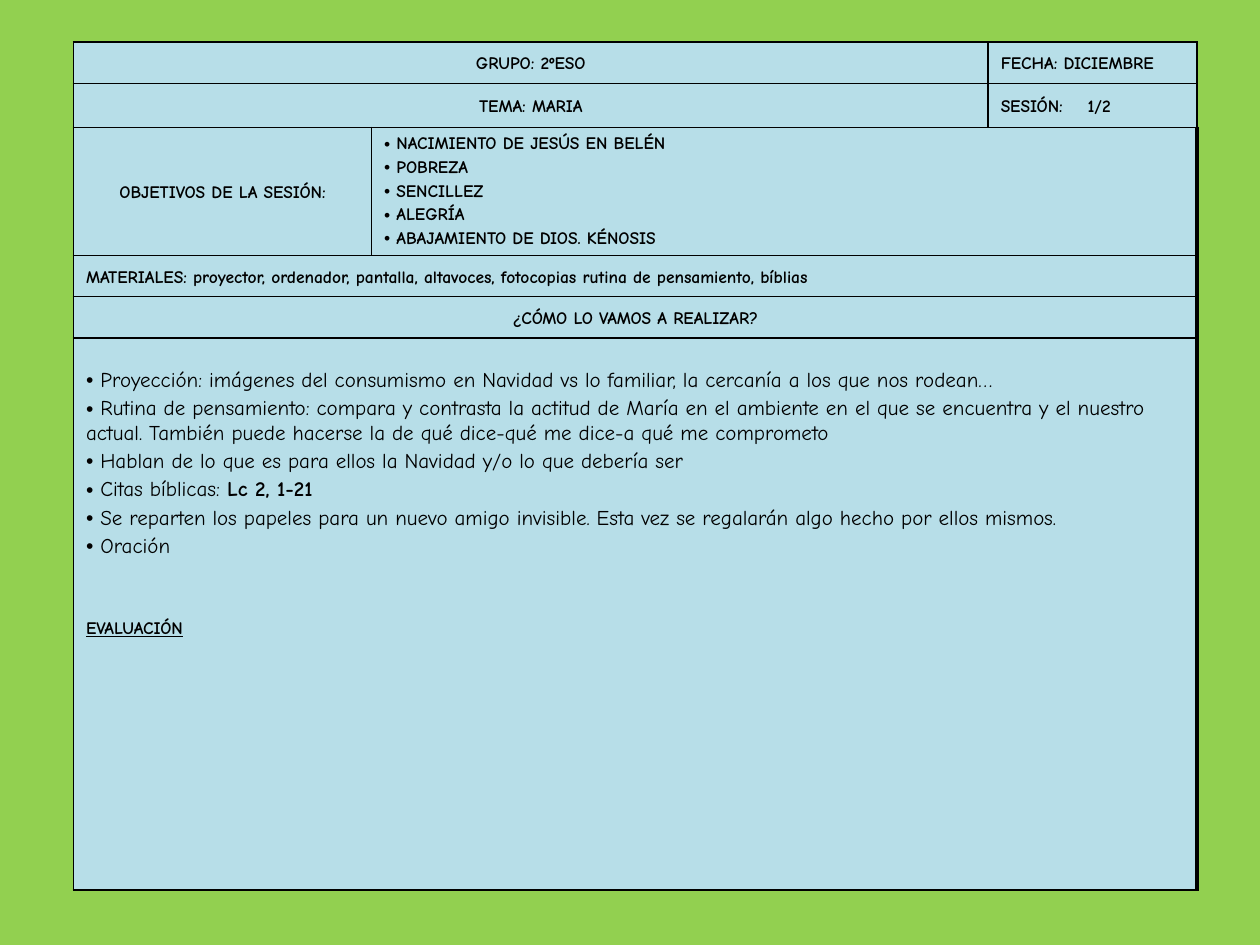
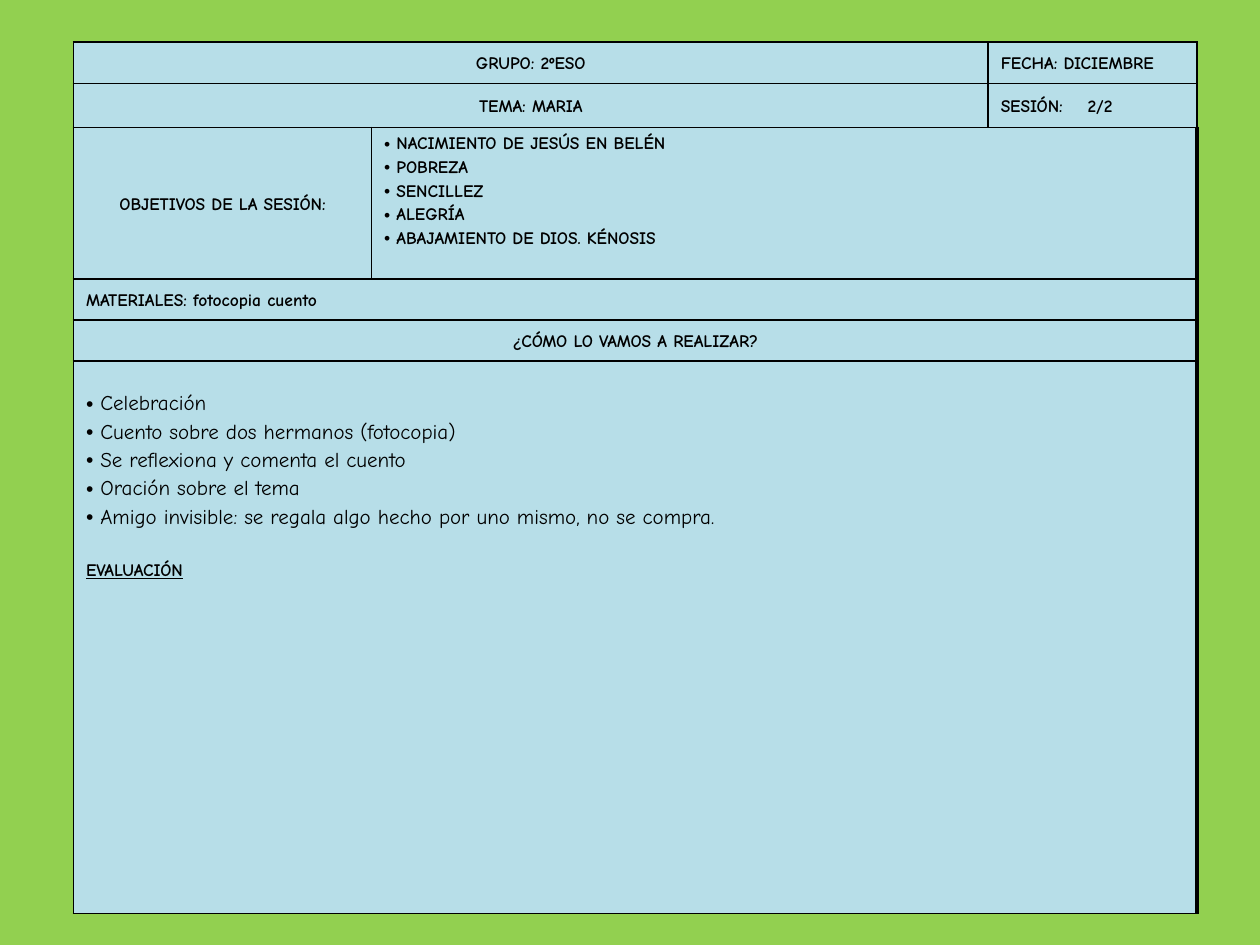
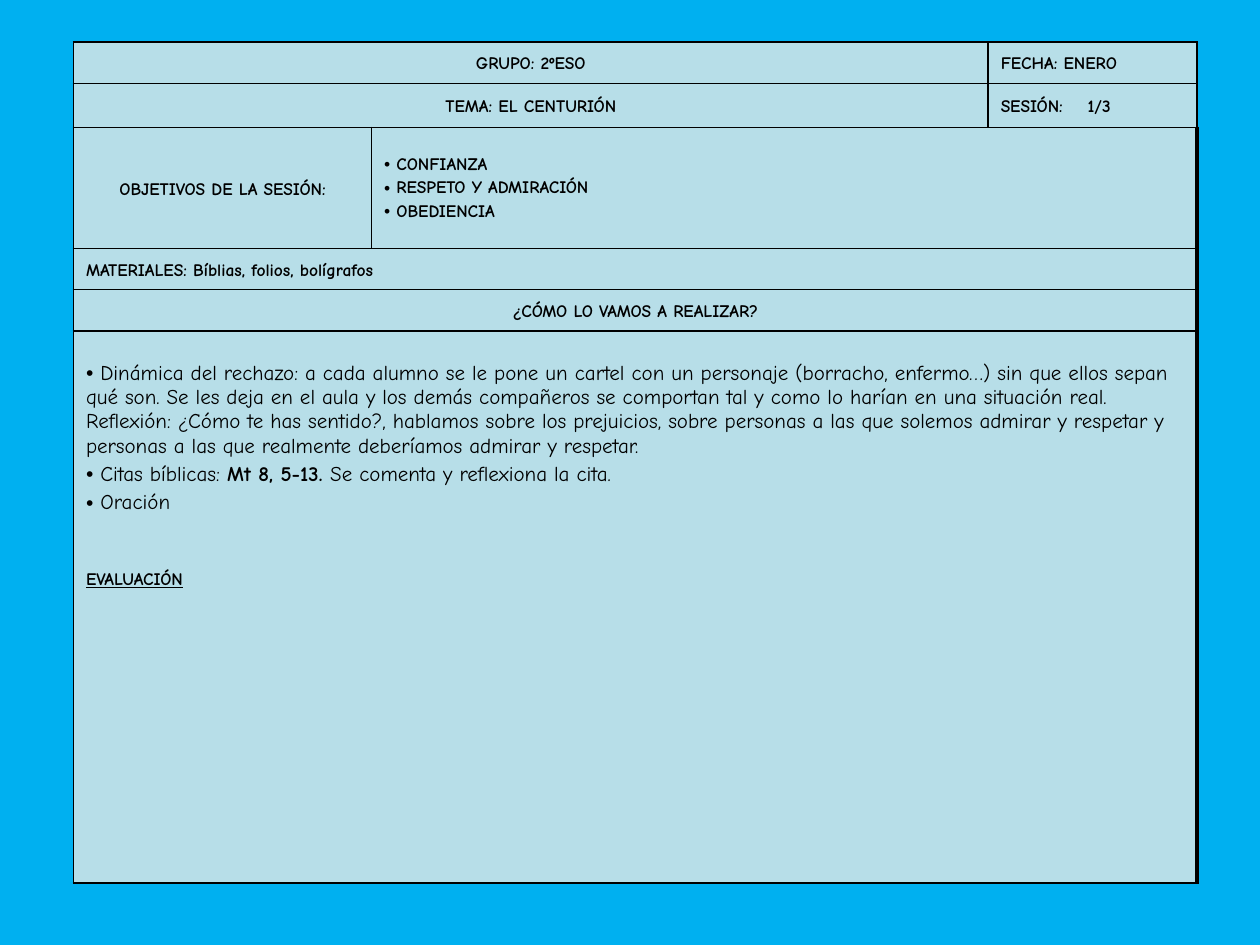
from dataclasses import dataclass

from lxml.etree import SubElement
from pptx import Presentation
from pptx.dml.color import RGBColor
from pptx.enum.text import MSO_ANCHOR, PP_ALIGN
from pptx.oxml.ns import qn
from pptx.util import Cm, Pt


# Theme
@dataclass(frozen=True)
class Theme:
    font: str = "Comic Neue"
    ink: str = "000000"
    cell: str = "B7DEE8"
    green: str = "92D050"
    blue: str = "00B0F0"
    label: int = 10
    body: int = 12
    leading: float = 1.15
    thin: float = 1
    thick: float = 2.25


THEME = Theme()
LEFT, TOP = 1.48, 0.85
COLS = (6.01, 12.43, 4.21)
HEADER_H, TOPIC_H, STRIP_H, BODY_H = 0.83, 0.89, 0.83, 11.13
PAD = 0.13
BODY_PAD = 0.62
TAB = 1.75


def write(tf, text, size=THEME.label, bold=True, underline=False, align=PP_ALIGN.LEFT,
          leading=None, before=0, bullet=False, tab=None):
    """Add a paragraph; **marked** parts switch the weight."""
    p = tf.paragraphs[0] if not tf.text else tf.add_paragraph()
    p.alignment = align
    p.space_before = Pt(before)
    if leading:
        p.line_spacing = leading
    pPr = p._p.get_or_add_pPr()
    if bullet:
        pPr.set("marL", "0")
        pPr.set("indent", "0")
        SubElement(pPr, qn("a:buFont"), typeface="Arial")
        SubElement(pPr, qn("a:buChar"), char="•")
        text = " " + text
    if tab:
        tabs = SubElement(pPr, qn("a:tabLst"))
        SubElement(tabs, qn("a:tab"), pos=str(Cm(tab)), algn="l")
    for i, part in enumerate(text.split("**")):
        if part:
            r = p.add_run()
            r.text = part
            r.font.name = THEME.font
            r.font.size = Pt(size)
            r.font.bold = bold != bool(i % 2)
            r.font.underline = underline
            r.font.color.rgb = RGBColor.from_string(THEME.ink)


class Deck:
    """Holds the theme, the presentation and the current slide and table."""

    def __init__(self, theme):
        self.theme = theme
        self.prs = Presentation()
        self.prs.slide_width, self.prs.slide_height = Cm(25.4), Cm(19.05)

    def slide(self, color):
        self.s = self.prs.slides.add_slide(self.prs.slide_layouts[6])
        fill = self.s.background.fill
        fill.solid()
        fill.fore_color.rgb = RGBColor.from_string(color)

    def grid(self, heights):
        frame = self.s.shapes.add_table(len(heights), len(COLS), Cm(LEFT), Cm(TOP),
                                        Cm(sum(COLS)), Cm(sum(heights)))
        self.table = frame.table
        self.table.first_row = self.table.horz_banding = False
        for col, width in zip(self.table.columns, COLS):
            col.width = Cm(width)
        for row, height in zip(self.table.rows, heights):
            row.height = Cm(height)

    def borders(self, cell, right):
        tcPr = cell._tc.get_or_add_tcPr()
        for side in "LRTB":
            width = right if side == "R" else self.theme.thin
            ln = SubElement(tcPr, qn(f"a:ln{side}"), w=str(Pt(width)))
            SubElement(SubElement(ln, qn("a:solidFill")), qn("a:srgbClr"), val=self.theme.ink)

    def cell(self, row, col, span=1, thick=False, anchor=MSO_ANCHOR.MIDDLE,
             top=PAD, bottom=PAD):
        """Format a cell and return its text frame."""
        for c in range(col, col + span):
            part = self.table.cell(row, c)
            self.borders(part, self.theme.thick if thick else self.theme.thin)
            part.fill.solid()
            part.fill.fore_color.rgb = RGBColor.from_string(self.theme.cell)
        cell = self.table.cell(row, col)
        if span > 1:
            cell.merge(self.table.cell(row, col + span - 1))
        cell.vertical_anchor = anchor
        cell.margin_top, cell.margin_bottom = Cm(top), Cm(bottom)
        return cell.text_frame

    def label(self, row, col, text, span=1, thick=False, center=False, tab=None):
        write(self.cell(row, col, span, thick), text, leading=self.theme.leading, tab=tab,
              align=PP_ALIGN.CENTER if center else PP_ALIGN.LEFT)

    def bullets(self, tf, items, size, bold):
        for item in items:
            write(tf, item, size=size, bold=bold, before=size * 0.2, bullet=True)

    def session(self, color, date, topic, number, goals, goals_h, materials, steps,
                gap, goals_bottom=PAD):
        """Build the plan of one session."""
        t = self.theme
        self.slide(color)
        self.grid((HEADER_H, TOPIC_H, goals_h, STRIP_H, STRIP_H, BODY_H))

        # Heading rows
        self.label(0, 0, "GRUPO: 2ºESO", span=2, center=True)
        self.label(0, 2, f"FECHA: {date}")
        self.label(1, 0, f"TEMA: {topic}", span=2, center=True)
        self.label(1, 2, f"SESIÓN:\t{number}", tab=TAB)

        # Goals and materials
        self.label(2, 0, "OBJETIVOS DE LA SESIÓN:", center=True)
        tf = self.cell(2, 1, span=2, thick=True, bottom=goals_bottom)
        self.bullets(tf, goals, t.label, True)
        self.label(3, 0, f"MATERIALES: {materials}", span=3, thick=True)

        # Steps and assessment
        self.label(4, 0, "¿CÓMO LO VAMOS A REALIZAR?", span=3, thick=True, center=True)
        tf = self.cell(5, 0, span=3, thick=True, anchor=MSO_ANCHOR.TOP, top=BODY_PAD)
        self.bullets(tf, steps, t.body, False)
        write(tf, "EVALUACIÓN", underline=True, leading=t.leading, before=gap)


# Session contents
CHRISTMAS_GOALS = ("NACIMIENTO DE JESÚS EN BELÉN", "POBREZA", "SENCILLEZ", "ALEGRÍA",
                   "ABAJAMIENTO DE DIOS. KÉNOSIS")

SESSIONS = (
    dict(
        color=THEME.green, date="DICIEMBRE", topic="MARIA", number="1/2",
        goals=CHRISTMAS_GOALS, goals_h=2.56, gap=32.4,
        materials="proyector, ordenador, pantalla, altavoces, fotocopias rutina de "
                  "pensamiento, bíblias",
        steps=(
            "Proyección: imágenes del consumismo en Navidad vs lo familiar, la cercanía a "
            "los que nos rodean…",
            "Rutina de pensamiento: compara y contrasta la actitud de María en el ambiente "
            "en el que se encuentra y el nuestro actual. También puede hacerse la de qué "
            "dice-qué me dice-a qué me comprometo",
            "Hablan de lo que es para ellos la Navidad y/o lo que debería ser",
            "Citas bíblicas: **Lc 2, 1-21**",
            "Se reparten los papeles para un nuevo amigo invisible. Esta vez se regalarán "
            "algo hecho por ellos mismos.",
            "Oración",
        ),
    ),
    dict(
        color=THEME.green, date="DICIEMBRE", topic="MARIA", number="2/2",
        goals=CHRISTMAS_GOALS, goals_h=3.03, goals_bottom=0.6, gap=16.2,
        materials="fotocopia cuento",
        steps=(
            "Celebración",
            "Cuento sobre dos hermanos (fotocopia)",
            "Se reflexiona y comenta el cuento",
            "Oración sobre el tema",
            "Amigo invisible: se regala algo hecho por uno mismo, no se compra.",
        ),
    ),
    dict(
        color=THEME.blue, date="ENERO", topic="EL CENTURIÓN", number="1/3",
        goals=("CONFIANZA", "RESPETO Y ADMIRACIÓN", "OBEDIENCIA"), goals_h=2.44, gap=29.4,
        materials="Bíblias, folios, bolígrafos",
        steps=(
            "Dinámica del rechazo: a cada alumno se le pone un cartel con un personaje "
            "(borracho, enfermo…) sin que ellos sepan qué son. Se les deja en el aula y los "
            "demás compañeros se comportan tal y como lo harían en una situación real. "
            "Reflexión: ¿Cómo te has sentido?, hablamos sobre los prejuicios, sobre personas "
            "a las que solemos admirar y respetar y personas a las que realmente deberíamos "
            "admirar y respetar.",
            "Citas bíblicas: **Mt 8, 5-13. **Se comenta y reflexiona la cita.",
            "Oración",
        ),
    ),
)


def main():
    deck = Deck(THEME)
    for session in SESSIONS:
        deck.session(**session)
    deck.prs.save("out.pptx")


if __name__ == "__main__":
    main()
